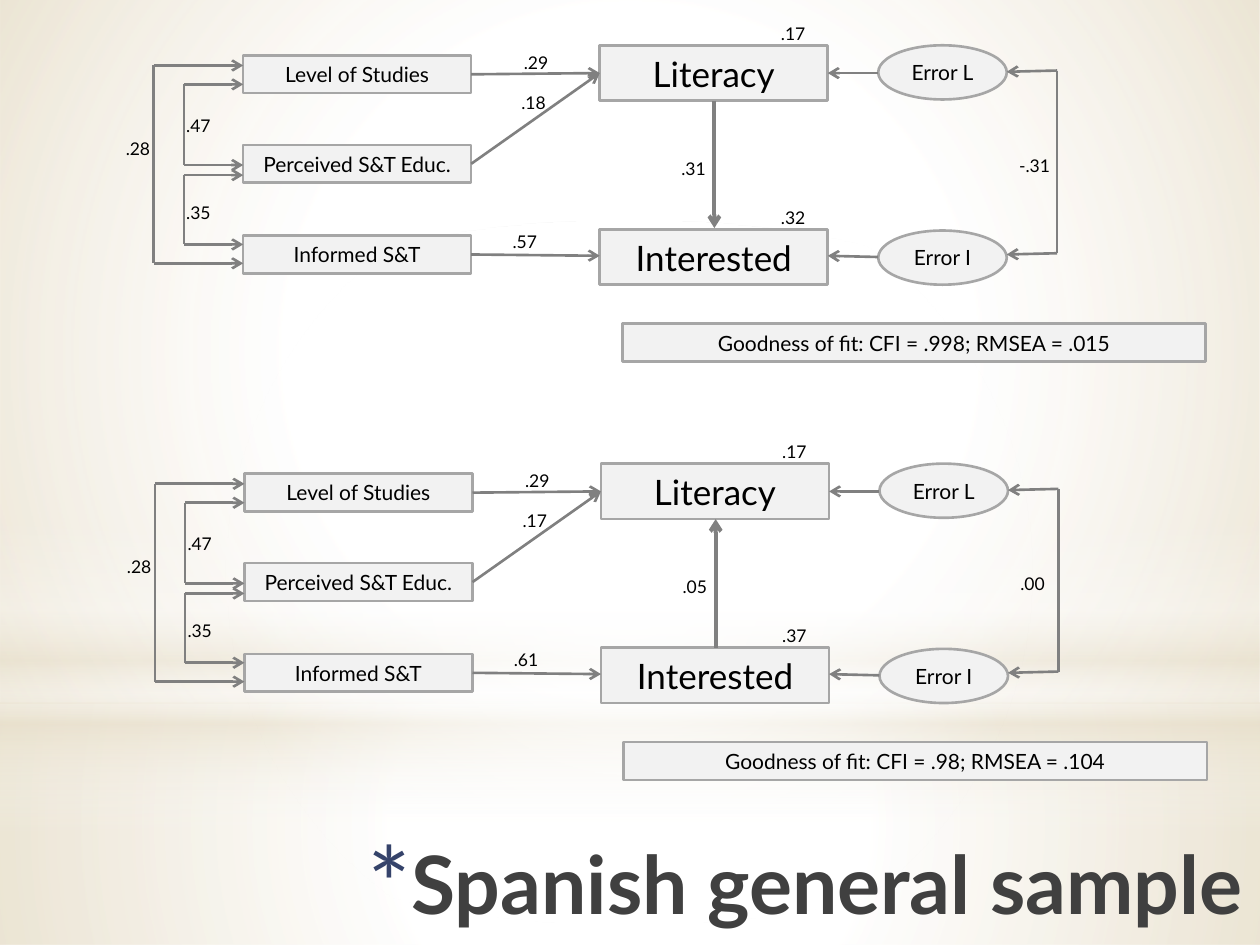
"""Draw two path models of a survey sample on one titled slide."""
from typing import NamedTuple

from pptx import Presentation
from pptx.dml.color import RGBColor
from pptx.enum.shapes import MSO_CONNECTOR, MSO_SHAPE
from pptx.enum.text import MSO_ANCHOR, MSO_AUTO_SIZE, PP_ALIGN
from pptx.oxml import parse_xml
from pptx.oxml.ns import nsdecls
from pptx.util import Inches, Pt

FONT = "Lato"
SAND = "E7DEC9"
WHITE = "FFFFFF"
RECT = MSO_SHAPE.RECTANGLE
OVAL = MSO_SHAPE.OVAL


class Band(NamedTuple):
    form: MSO_SHAPE
    top: float
    high: float
    stops: list
    round: bool = True


class Node(NamedTuple):
    text: str
    left: float
    top: float
    wide: float
    high: float
    size: int = 12
    form: MSO_SHAPE = RECT


class Arrow(NamedTuple):
    x1: float
    y1: float
    x2: float
    y2: float
    width: float = 1.5
    head: bool = True


class Brace(NamedTuple):
    spine: float
    tip: float
    top: float
    low: float
    drop: float = 0


class Model(NamedTuple):
    dx: float
    dy: float
    marks: list
    fit: str
    main: Arrow


BANDS = [
    Band(RECT, 5.58, 1.92, [(0, WHITE, 91), (37, WHITE, 76), (100, SAND, 79)]),
    Band(RECT, 0, 5.58, [(0, WHITE, 89), (48, WHITE, 62), (100, SAND, 79)]),
    Band(RECT, 4.12, 2.5, [(0, WHITE, 0), (29, WHITE, 30), (45, SAND, 40),
                           (55, WHITE, 26), (65, SAND, 60), (100, WHITE, 0)], False),
    Band(OVAL, 1.75, 5.58, [(0, WHITE, 100), (56, WHITE, 0)]),
]
NODES = [
    Node("Level of Studies", 1.93, 0.44, 1.81, 0.3),
    Node("Perceived S&T Educ.", 1.93, 1.15, 1.81, 0.3),
    Node("Informed S&T", 1.93, 1.87, 1.81, 0.3),
    Node("Literacy", 4.76, 0.36, 1.81, 0.44, 20),
    Node("Interested", 4.76, 1.82, 1.81, 0.44, 20),
    Node("Error L", 6.97, 0.36, 1.02, 0.43, form=OVAL),
    Node("Error I", 6.97, 1.83, 1.02, 0.43, form=OVAL),
]
ARROWS = [
    Arrow(3.74, 0.59, 4.76, 0.58),
    Arrow(3.74, 1.3, 4.76, 0.58),
    Arrow(3.74, 2.02, 4.76, 2.03),
    Arrow(6.97, 0.58, 6.57, 0.58),
    Arrow(6.97, 2.04, 6.57, 2.03),
]
BRACES = [
    Brace(1.22, 1.93, 0.52, 2.09),
    Brace(1.46, 1.93, 0.67, 1.31),
    Brace(1.46, 1.93, 1.39, 1.94),
    Brace(8.39, 7.99, 0.56, 2.01, 0.01),
]
SPOTS = [(1.38, 1.55), (1.38, 0.86), (0.9, 1.04), (4.06, 0.36), (4.04, 0.68),
         (3.97, 1.78), (6.1, 1.59), (6.1, 0.13), (5.31, 1.2), (7.99, 1.18)]
MODELS = [
    Model(0, 0, [".35", ".47", ".28", ".29", ".18", ".57", ".32", ".17", ".31", "-.31"],
          "Goodness of fit: CFI = .998; RMSEA = .015", Arrow(5.67, 0.8, 5.67, 1.81, 2.25)),
    Model(0.01, 3.32, [".35", ".47", ".28", ".29", ".17", ".61", ".37", ".17", ".05", ".00"],
          "Goodness of fit: CFI = .98; RMSEA = .104", Arrow(5.67, 1.82, 5.67, 0.8, 2.25)),
]


def tint(code: str) -> RGBColor:
    return RGBColor.from_string(code)


def write(shape, text: str, size=12, color="000000", bold=False, align=PP_ALIGN.CENTER,
          wrap=True, fit=MSO_AUTO_SIZE.SHAPE_TO_FIT_TEXT) -> None:
    frame = shape.text_frame
    frame.word_wrap, frame.auto_size = wrap, fit
    frame.vertical_anchor = MSO_ANCHOR.MIDDLE
    line = frame.paragraphs[0]
    line.alignment = align
    run = line.add_run()
    run.text = text
    run.font.name, run.font.size, run.font.bold = FONT, Pt(size), bold
    run.font.color.rgb = tint(color)


def place(slide, form: MSO_SHAPE, *box: float):
    shape = slide.shapes.add_shape(form, *map(Inches, box))
    shape.shadow.inherit = False
    return shape


def draw_band(slide, band: Band) -> None:
    shape = place(slide, band.form, 0, band.top, 10, band.high)
    shape.line.fill.background()
    stops = "".join(
        f'<a:gs pos="{at * 1000}"><a:srgbClr val="{code}">'
        f'<a:alpha val="{alpha * 1000}"/></a:srgbClr></a:gs>'
        for at, code, alpha in band.stops)
    shade = ('<a:path path="circle"><a:fillToRect l="50000" t="50000" r="50000" b="50000"/>'
             '</a:path>' if band.round else '<a:lin ang="5400000" scaled="0"/>')
    fill = parse_xml(f'<a:gradFill {nsdecls("a")} rotWithShape="1">'
                     f'<a:gsLst>{stops}</a:gsLst>{shade}</a:gradFill>')
    shape._element.spPr.find("{*}prstGeom").addnext(fill)


def draw_node(slide, node: Node, dx: float, dy: float) -> None:
    shape = place(slide, node.form, node.left + dx, node.top + dy, node.wide, node.high)
    shape.fill.solid()
    shape.fill.fore_color.rgb = tint("F2F2F2")
    shape.line.color.rgb = tint("A6A6A6")
    shape.line.width = Pt(1.5)
    write(shape, node.text, size=node.size)


def draw_arrow(slide, arrow: Arrow, dx: float, dy: float) -> None:
    ends = (arrow.x1 + dx, arrow.y1 + dy, arrow.x2 + dx, arrow.y2 + dy)
    link = slide.shapes.add_connector(MSO_CONNECTOR.STRAIGHT, *map(Inches, ends))
    link.line.color.rgb = tint("808080")
    link.line.width = Pt(arrow.width)
    if arrow.head:
        link.line._ln.append(parse_xml(f'<a:tailEnd {nsdecls("a")} type="arrow"/>'))
    link._element.spPr.append(parse_xml(f'<a:effectLst {nsdecls("a")}/>'))


def draw_brace(slide, brace: Brace, dx: float, dy: float) -> None:
    spine, tip, top, low, drop = brace
    for y in (top, low):
        draw_arrow(slide, Arrow(spine, y, tip, y + drop), dx, dy)
    draw_arrow(slide, Arrow(spine, top, spine, low, head=False), dx, dy)


def draw_mark(slide, text: str, left: float, top: float) -> None:
    wide = 0.45 if text.startswith("-") else 0.4
    box = slide.shapes.add_textbox(*map(Inches, (left, top, wide, 0.27)))
    write(box, text, size=10, align=PP_ALIGN.LEFT, wrap=False)


def draw_model(slide, model: Model) -> None:
    dx, dy = model.dx, model.dy
    for node in [*NODES, Node(model.fit, 4.94, 2.57, 4.63, 0.3)]:
        draw_node(slide, node, dx, dy)
    for arrow in [*ARROWS, model.main]:
        draw_arrow(slide, arrow, dx, dy)
    for brace in BRACES:
        draw_brace(slide, brace, dx, dy)
    for text, (left, top) in zip(model.marks, SPOTS):
        draw_mark(slide, text, left + dx, top + dy)


def set_title(slide, text: str) -> None:
    title = slide.shapes.title
    title.left, title.top, title.width, title.height = map(Inches, (0.6, 6.56, 9.36, 0.89))
    write(title, text, size=46, color="404040", bold=True, align=PP_ALIGN.RIGHT,
          fit=MSO_AUTO_SIZE.NONE)
    props = title.text_frame.paragraphs[0]._p.get_or_add_pPr()
    props.set("marL", str(Inches(0.35)))
    props.set("indent", str(-Inches(0.35)))
    for tag in ('buClr><a:srgbClr val="35436A"/></a:buClr', 'buSzPct val="128000"/',
                f'buFont typeface="{FONT}"/', 'buChar char="*"/'):
        head, rest = (tag + ">").split(">", 1) if tag.startswith("buClr") else (tag, "")
        name, *attrs = head.split(" ", 1)
        props.append(parse_xml(f'<a:{name} {nsdecls("a")} {"".join(attrs)}>{rest}'))
    slide.shapes._spTree.append(title._element)


def main() -> None:
    deck = Presentation()
    deck.slide_width, deck.slide_height = Inches(10), Inches(7.5)
    slide = deck.slides.add_slide(deck.slide_layouts[5])
    slide.background.fill.solid()
    slide.background.fill.fore_color.rgb = tint(WHITE)
    for band in BANDS:
        draw_band(slide, band)
    set_title(slide, "Spanish general sample")
    for model in MODELS:
        draw_model(slide, model)
    deck.save("out.pptx")


if __name__ == "__main__":
    main()
